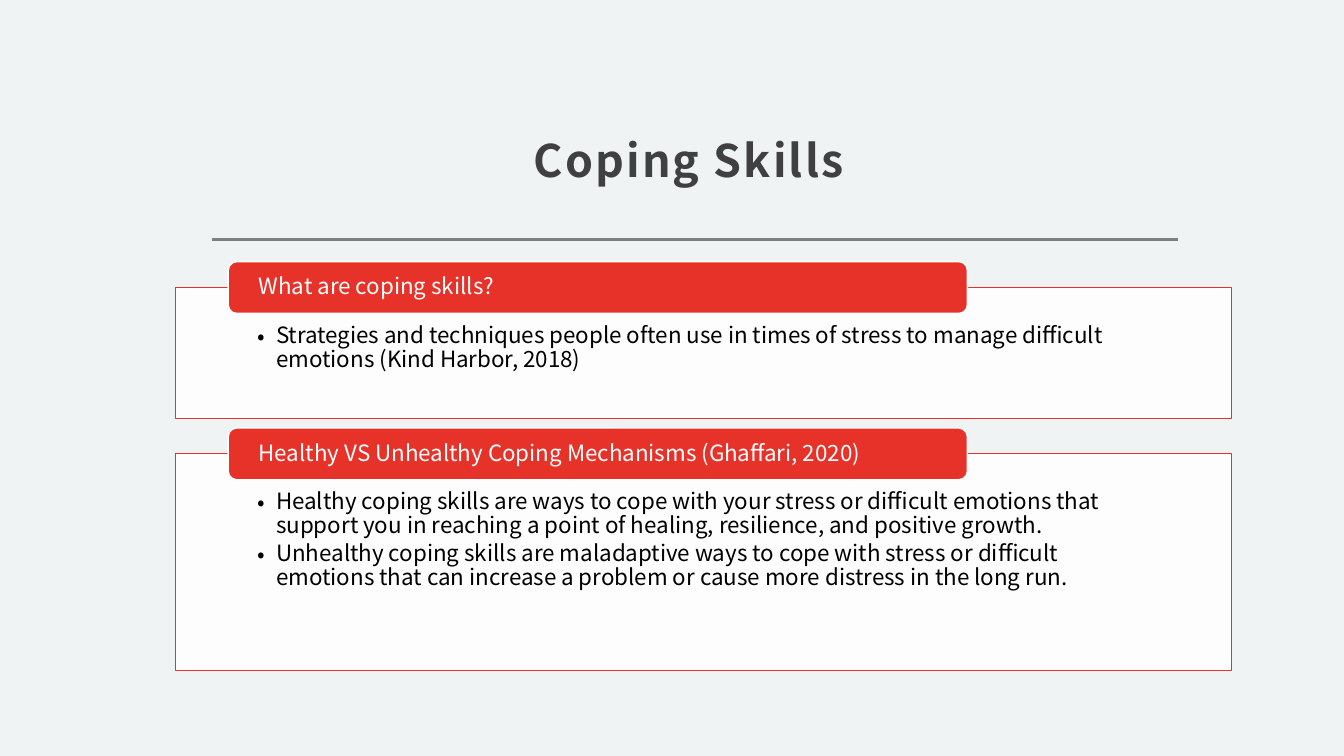
"""Builds the Coping Skills slide with two titled panels."""
from lxml.etree import SubElement
from pptx import Presentation
from pptx.dml.color import RGBColor
from pptx.enum.shapes import MSO_CONNECTOR, MSO_SHAPE
from pptx.enum.text import MSO_ANCHOR, MSO_AUTO_SIZE, PP_ALIGN
from pptx.oxml.ns import qn
from pptx.util import Pt

FONT = "Noto Sans CJK JP"
RED, WHITE = "E73229", "FFFFFF"
PANELS = [
    ("What are coping skills?", 93.6, [
        "Strategies and techniques people often use in times of stress to manage "
        "difficult emotions (Kind Harbor, 2018)"]),
    ("Healthy VS Unhealthy Coping Mechanisms (Ghaffari, 2020)", 154.8, [
        "Healthy coping skills are ways to cope with your stress or difficult emotions "
        "that support you in reaching a point of healing, resilience, and positive growth.",
        "Unhealthy coping skills are maladaptive ways to cope with stress or difficult "
        "emotions that can increase a problem or cause more distress in the long run."]),
]
PANEL_GAP = 25.2
TAB_RISE = 18.4


def color(value):
    return RGBColor.from_string(value)


def write(shape, lines, size=16, ink="000000", bold=False, spacing=0.9, after=0,
          align=PP_ALIGN.LEFT, anchor=MSO_ANCHOR.TOP, insets=(0, 0, 0, 0),
          bullet=False, tracking=0):
    frame = shape.text_frame
    frame.word_wrap = True
    frame.auto_size = MSO_AUTO_SIZE.NONE
    frame.vertical_anchor = anchor
    (frame.margin_left, frame.margin_top,
     frame.margin_right, frame.margin_bottom) = [Pt(inset) for inset in insets]
    for index, line in enumerate(lines):
        para = frame.add_paragraph() if index else frame.paragraphs[0]
        para.alignment = align
        para.line_spacing = spacing
        para.space_before = Pt(0)
        para.space_after = Pt(after)
        if bullet:
            properties = para._p.get_or_add_pPr()
            properties.set("marL", str(Pt(13.5)))
            properties.set("indent", str(Pt(-13.5)))
            SubElement(properties, qn("a:buFont")).set("typeface", FONT)
            SubElement(properties, qn("a:buChar")).set("char", "•")
        span = para.add_run()
        span.text = line
        span.font.name = FONT
        span.font.size = Pt(size)
        span.font.bold = bold
        span.font.color.rgb = color(ink)
        if tracking:
            span.font._element.set("spc", str(int(tracking * 100)))


deck = Presentation()
deck.slide_width, deck.slide_height = Pt(960), Pt(540)
page = deck.slides.add_slide(deck.slide_layouts[5])
page.background.fill.solid()
page.background.fill.fore_color.rgb = color("F0F3F3")

title = page.shapes.title
title.left, title.top, title.width, title.height = Pt(151.2), Pt(34.6), Pt(690.5), Pt(105.8)
write(title, ["Coping Skills "], size=32, ink="404040", bold=True, spacing=1.3,
      align=PP_ALIGN.CENTER, anchor=MSO_ANCHOR.BOTTOM, insets=(8.6, 8.6, 8.6, 7.2),
      tracking=1.5)

rule = page.shapes.add_connector(
    MSO_CONNECTOR.STRAIGHT, Pt(151.2), Pt(171.2), Pt(841.7), Pt(171.2))
rule.line.color.rgb = color("808080")
rule.line.width = Pt(2)
SubElement(rule._element.spPr, qn("a:effectLst"))

top = 205.3
for heading, height, points in PANELS:
    panel = page.shapes.add_shape(
        MSO_SHAPE.RECTANGLE, Pt(125.3), Pt(top), Pt(754.3), Pt(height))
    tab = page.shapes.add_shape(
        MSO_SHAPE.ROUNDED_RECTANGLE, Pt(163), Pt(top - TAB_RISE), Pt(528), Pt(37))
    for shape, fill, line in ((panel, WHITE, RED), (tab, RED, WHITE)):
        shape.shadow.inherit = False
        shape.fill.solid()
        shape.fill.fore_color.rgb = color(fill)
        shape.line.color.rgb = color(line)
        shape.line.width = Pt(1)
    panel_color = panel._element.spPr.find(qn("a:solidFill"))[0]
    SubElement(panel_color, qn("a:alpha")).set("val", "90000")
    write(panel, points, after=2.4, bullet=True, insets=(58.5, 26, 58.5, 8.6))
    write(tab, [heading], ink=WHITE, anchor=MSO_ANCHOR.MIDDLE, insets=(20, 0, 20, 0))
    top += height + PANEL_GAP

deck.save("out.pptx")
